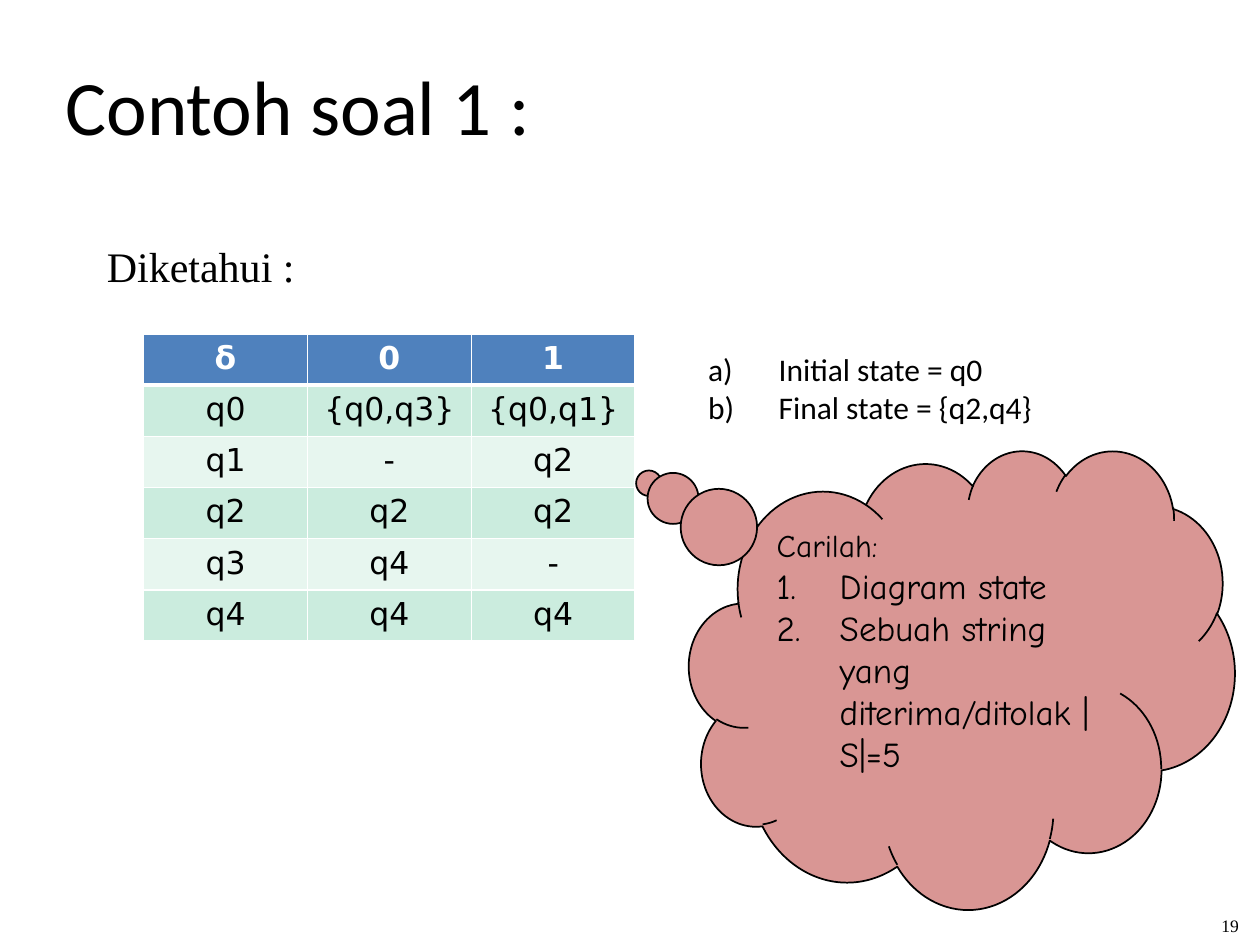
import pptx
import pptx.util
import pptx.dml.color
import pptx.enum.shapes
import pptx.enum.text
import pptx.oxml
import pptx.oxml.ns

Inches = pptx.util.Inches
Pt = pptx.util.Pt
ALIGN = pptx.enum.text.PP_ALIGN
ANCHOR = pptx.enum.text.MSO_ANCHOR
FIT = pptx.enum.text.MSO_AUTO_SIZE

# Content
TITLE = "Contoh soal 1 :"
INTRO = "Diketahui :"
NUMBER = "19"
ROWS = [
    ("δ", "0", "1"),
    ("q0", "{q0,q3}", "{q0,q1}"),
    ("q1", "-", "q2"),
    ("q2", "q2", "q2"),
    ("q3", "q4", "-"),
    ("q4", "q4", "q4"),
]
STATES = ["Initial state = q0", "Final state = {q2,q4}"]
TASK = "Carilah:"
TASKS = ["Diagram state", "Sebuah string yang diterima/ditolak |S|=5"]

COLORS = {"ink": "000000", "white": "FFFFFF", "head": "4F81BD",
          "dark": "CBECDE", "light": "E7F6EF", "cloud": "D99694"}
SANS, SERIF, GRID, COMIC = "Calibri", "Times New Roman", "DejaVu Sans", "Comic Neue"


def color(name):
    return pptx.dml.color.RGBColor.from_string(COLORS[name])


def box(left, top, width, height):
    return [Inches(n) for n in (left, top, width, height)]


def place(shape, *area):
    shape.left, shape.top, shape.width, shape.height = box(*area)


def write(para, text, size, face, align=ALIGN.LEFT, ink="ink", bold=False):
    para.alignment = align
    para.space_before = Pt(0)
    run = para.add_run()
    run.text = text
    font = run.font
    font.size, font.name, font.bold = Pt(size), face, bold
    font.color.rgb = color(ink)


def number(para, kind, left, hang, face):
    props = para._p.get_or_add_pPr()
    props.set("marL", str(Inches(left)))
    props.set("indent", str(-Inches(hang)))
    for tag, key, value in (("buFont", "typeface", face), ("buAutoNum", "type", kind)):
        item = pptx.oxml.parse_xml(f'<a:{tag} {pptx.oxml.ns.nsdecls("a")} {key}="{value}"/>')
        props.append(item)


def border(cell, row):
    props = cell._tc.get_or_add_tcPr()
    widths = {"L": 1, "R": 1, "T": 3 if row == 1 else 1, "B": 3 if row == 0 else 1}
    for spot, (side, width) in enumerate(widths.items()):
        props.insert(spot, pptx.oxml.parse_xml(
            f'<a:ln{side} {pptx.oxml.ns.nsdecls("a")} w="{Pt(width)}"><a:solidFill>'
            f'<a:srgbClr val="{COLORS["white"]}"/></a:solidFill></a:ln{side}>'))


deck = pptx.Presentation()
deck.slide_width, deck.slide_height = Inches(10), Inches(7.5)
slide = deck.slides.add_slide(deck.slide_layouts[1])
shapes = slide.shapes

# Slide number
page = shapes.add_textbox(*box(7.66, 7.19, 2.27, 0.31)).text_frame
page.word_wrap = True
page.vertical_anchor = ANCHOR.MIDDLE
write(page.paragraphs[0], NUMBER, 10, SERIF, ALIGN.RIGHT)

# Title
title = shapes.title
place(title, 0.42, 0.33, 9.25, 1)
title.text_frame.vertical_anchor = ANCHOR.MIDDLE
title.text_frame.auto_size = FIT.NONE
write(title.text_frame.paragraphs[0], TITLE, 44, SANS)

# Transition table
grid = shapes.add_table(len(ROWS), 3, *box(1.14, 2.65, 3.9, 2.44)).table
for col in grid.columns:
    col.width = Inches(1.3)
for r, row in enumerate(ROWS):
    fill = "head" if r == 0 else ("light", "dark")[r % 2]
    for c, text in enumerate(row):
        cell = grid.cell(r, c)
        cell.fill.solid()
        cell.fill.fore_color.rgb = color(fill)
        border(cell, r)
        write(cell.text_frame.paragraphs[0], text, 18, GRID, ALIGN.CENTER,
              "white" if r == 0 else "ink", r == 0)

# Intro line
intro = shapes.add_textbox(*box(0.75, 1.86, 1.7, 0.51)).text_frame
intro.word_wrap = False
write(intro.paragraphs[0], INTRO, 24, SERIF)

# Start and end states
body = slide.placeholders[1]
place(body, 5.08, 2.73, 4.25, 0.91)
frame = body.text_frame
frame.auto_size = FIT.NONE
for i, text in enumerate(STATES):
    para = frame.add_paragraph() if i else frame.paragraphs[0]
    para.level = 1
    number(para, "alphaLcParenR", 1, 0.56, SANS)
    write(para, text, 18, SANS)

# Task cloud
cloud = shapes.add_shape(pptx.enum.shapes.MSO_SHAPE.CLOUD_CALLOUT, *box(5.47, 3.57, 4.33, 3.64))
cloud.adjustments[0], cloud.adjustments[1] = -0.574, -0.427
cloud.shadow.inherit = False
cloud.fill.solid()
cloud.fill.fore_color.rgb = color("cloud")
cloud.line.color.rgb = color("ink")
cloud.line.width = Pt(1)
frame = cloud.text_frame
frame.word_wrap = True
frame.vertical_anchor = ANCHOR.MIDDLE
frame.margin_bottom = Inches(0.34)
write(frame.paragraphs[0], TASK, 18, COMIC)
for text in TASKS:
    para = frame.add_paragraph()
    number(para, "arabicPeriod", 0.5, 0.5, COMIC)
    write(para, text, 20, COMIC)

deck.save("out.pptx")
